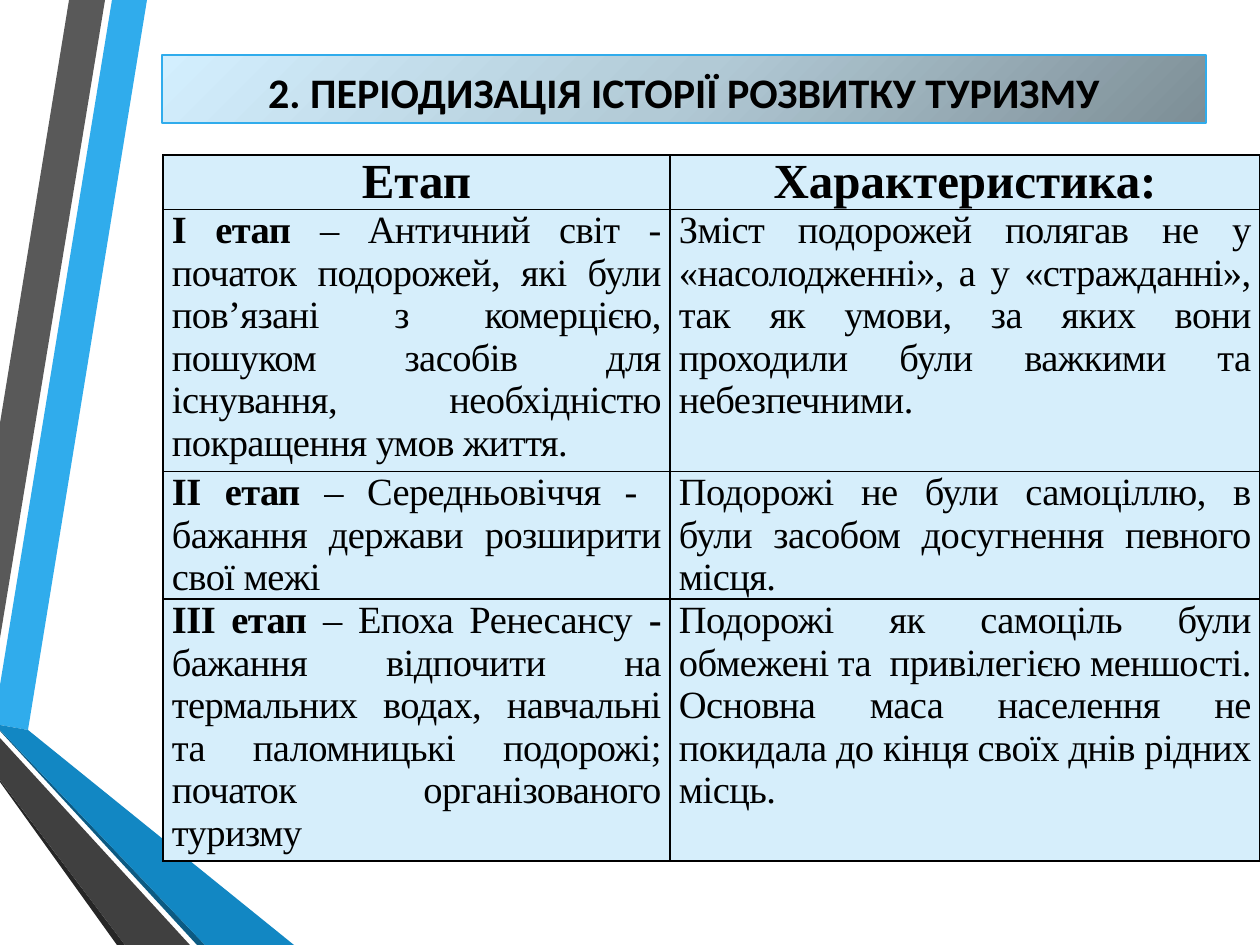
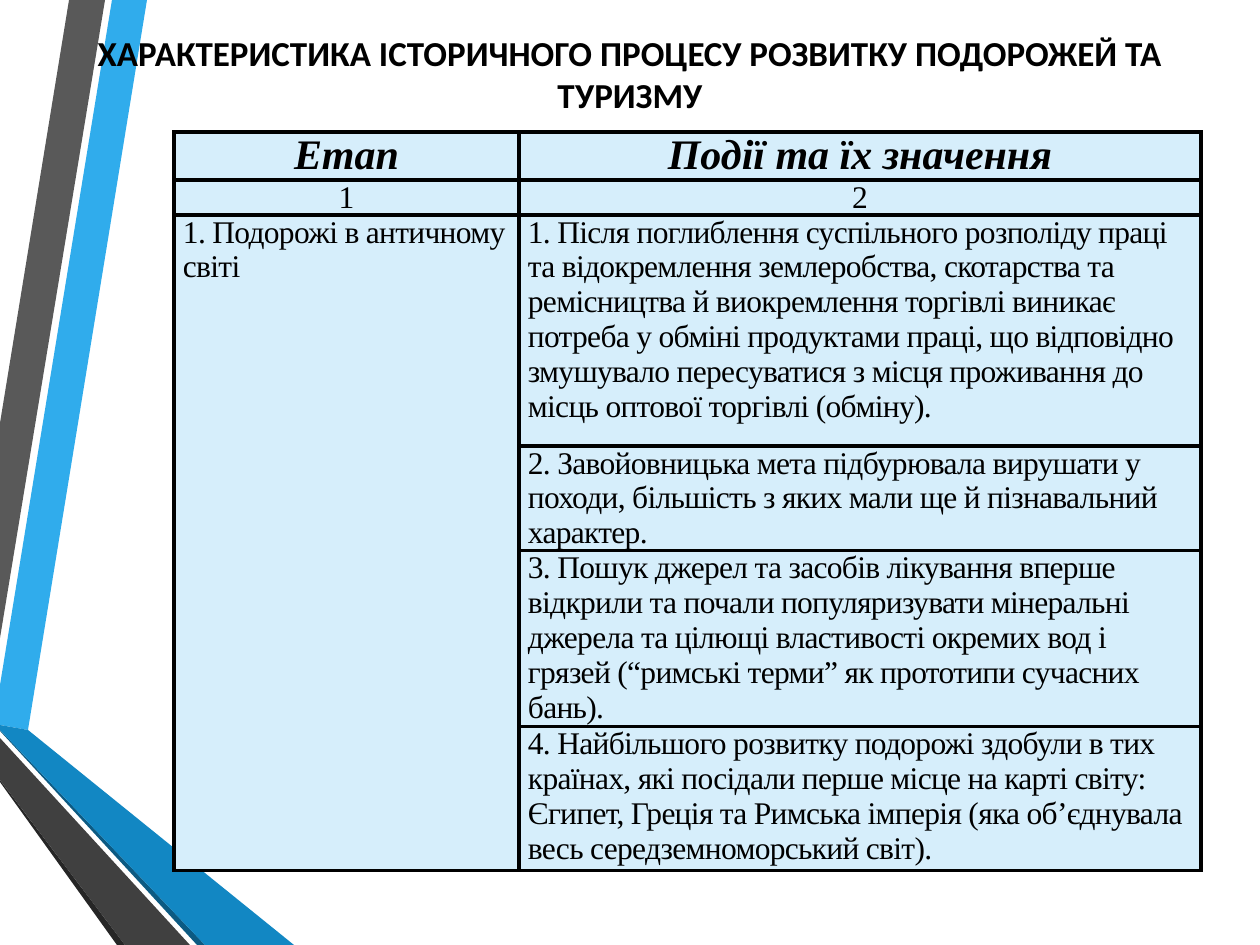
"""Two slides on the stages of the history of travel and tourism."""
from lxml import etree
from pptx import Presentation
from pptx import util as u
from pptx.dml import color
from pptx.enum import text
from pptx.oxml import ns

WIDTH, HEIGHT = 1260, 945
EMU_PER_PX = 914400 / 126
COLORS = {
    "sky": "30ACEC", "gray": "595959", "black": "000000", "ink": "262626",
    "navy": "0C5A82", "blue": "1287C3", "dark": "404040", "cell": "D6EEFB",
    "steel": "7D8E96", "mist": "B2CAD6", "ice": "D3EFFE",
}
BANDS = [
    ("sky", [(0, 685), (0, 725), (28, 730), (147, 0), (112, 0)]),
    ("gray", [(105, 0), (69, 0), (0, 423), (0, 638)]),
    ("ink", [(0, 780), (0, 782), (117, 945), (125, 945)]),
    ("navy", [(0, 730), (0, 731), (197, 945), (205, 945)]),
    ("blue", [(0, 730), (205, 945), (294, 945), (28, 730), (0, 725)]),
    ("dark", [(0, 780), (125, 945), (190, 945), (0, 738)]),
]
TITLE_GRADIENT = [(0, "steel"), (50, "mist"), (100, "ice")]
CENTER, JUSTIFY, LEFT = (text.PP_ALIGN.CENTER, text.PP_ALIGN.JUSTIFY,
                         text.PP_ALIGN.LEFT)
SERIF = "Times New Roman"

STAGES = [
    ["Етап", "Характеристика:"],
    [["І етап ", "– Античний світ - початок подорожей, які були пов’язані з "
      "комерцією, пошуком засобів для існування, необхідністю покращення "
      "умов життя."],
     "Зміст подорожей полягав не у «насолодженні», а у «стражданні», так як "
     "умови, за яких вони проходили були важкими та небезпечними."],
    [["ІІ етап ", "– Середньовіччя -  бажання держави розширити свої межі"],
     "Подорожі не були самоціллю, в були засобом досугнення певного місця."],
    [["ІІІ етап ", "– Епоха Ренесансу", " - ", "бажання відпочити на "
      "термальних водах, навчальні та паломницькі подорожі; початок "
      "організованого туризму"],
     "Подорожі як самоціль були обмежені та  привілегією меншості. Основна "
     "маса населення не покидала до кінця своїх днів рідних місць."],
]
EVENTS = [
    ["Етап", "Події та їх значення"],
    ["1", "2"],
    ["1. Подорожі в античному світі",
     "1. Після поглиблення суспільного розполіду праці та відокремлення "
     "землеробства, скотарства та ремісництва й виокремлення торгівлі "
     "виникає потреба у обміні продуктами праці, що відповідно змушувало "
     "пересуватися з місця проживання до місць оптової торгівлі (обміну)."],
    ["", "2. Завойовницька мета підбурювала вирушати у походи, більшість з "
     "яких мали ще й пізнавальний характер."],
    ["", "3. Пошук джерел та засобів лікування вперше відкрили та почали "
     "популяризувати мінеральні джерела та цілющі властивості окремих вод і "
     "грязей (“римські терми” як прототипи сучасних бань)."],
    ["", "4. Найбільшого розвитку подорожі здобули в тих країнах, які "
     "посідали перше місце на карті світу: Єгипет, Греція та Римська імперія "
     "(яка об’єднувала весь середземноморський світ)."],
]


def px(n):
    """Turn px into EMU."""
    return u.Emu(round(n * EMU_PER_PX))


def rgb(name):
    """Look up a named colour."""
    return color.RGBColor.from_string(COLORS[name])


def add_run(p, words, spacing=0, **fmt):
    """Add a black run with font settings and letter spacing in points."""
    r = p.add_run()
    r.text = words
    for key, value in fmt.items():
        setattr(r.font, key, value)
    r.font.color.rgb = rgb("black")
    if spacing:
        r.font._element.set("spc", str(round(spacing * 100)))


def add_bands(s, layout):
    """Draw the ribbon bands and move them to the back of the layout."""
    for i, (fill, points) in enumerate(BANDS):
        builder = s.shapes.build_freeform(*points[0], scale=EMU_PER_PX)
        builder.add_line_segments(points[1:], close=True)
        sp = builder.convert_to_shape()
        sp.shadow.inherit = False
        sp.fill.solid()
        sp.fill.fore_color.rgb = rgb(fill)
        sp.line.fill.background()
        layout.shapes.element.insert(2 + i, sp.element)


def set_title(s, words, box, size, top, bottom):
    """Place and format the title placeholder."""
    sp = s.shapes.title
    sp.left, sp.top, sp.width, sp.height = map(px, box)
    tf = sp.text_frame
    settings = {"word_wrap": True, "auto_size": text.MSO_AUTO_SIZE.NONE,
                "vertical_anchor": text.MSO_ANCHOR.MIDDLE,
                "margin_top": px(top), "margin_bottom": px(bottom)}
    for key, value in settings.items():
        setattr(tf, key, value)
    p = tf.paragraphs[0]
    p.alignment = CENTER
    add_run(p, words, name="Calibri", size=u.Pt(size), bold=True)
    return sp


def shade_title(sp):
    """Give the title a gradient from its lower right corner and a thin line."""
    sp.fill.gradient()
    grad = sp.element.spPr.find(ns.qn("a:gradFill"))
    for child in list(grad):
        grad.remove(child)
    stops = etree.SubElement(grad, ns.qn("a:gsLst"))
    for pos, name in TITLE_GRADIENT:
        stop = etree.SubElement(stops, ns.qn("a:gs"), pos=str(pos * 1000))
        etree.SubElement(stop, ns.qn("a:srgbClr"), val=COLORS[name])
    path = etree.SubElement(grad, ns.qn("a:path"), {"path": "circle"})
    etree.SubElement(path, ns.qn("a:fillToRect"), l="100000", t="100000")
    sp.line.color.rgb = rgb("sky")
    sp.line.width = u.Pt(0.75)


def format_cell(cell, border):
    """Set the borders, fill and margins of a cell."""
    tc_pr = cell._tc.get_or_add_tcPr()
    for side in "LRTB":
        ln = etree.SubElement(tc_pr, ns.qn("a:ln" + side),
                              w=str(u.Pt(border)))
        fill = etree.SubElement(ln, ns.qn("a:solidFill"))
        etree.SubElement(fill, ns.qn("a:srgbClr"), val=COLORS["black"])
    cell.fill.solid()
    cell.fill.fore_color.rgb = rgb("cell")
    margins = {"left": 9, "right": 9, "top": 0, "bottom": 0}
    for side, width in margins.items():
        setattr(cell, "margin_" + side, px(width))


def write_cell(cell, content, align, fmt):
    """Write plain text, or a list of runs that alternate bold and regular."""
    p = cell.text_frame.paragraphs[0]
    p.alignment = align
    if isinstance(content, str):
        add_run(p, content, **fmt)
        return
    for i, words in enumerate(content):
        add_run(p, words, **{**fmt, "bold": i % 2 == 0})


def add_grid(s, rows, at, widths, heights, border, styles):
    """Add a table; styles holds alignment and font, the last one repeating."""
    frame = s.shapes.add_table(len(rows), len(widths), *map(px, at),
                               px(sum(widths)), px(sum(heights)))
    table = frame.table
    for col, width in zip(table.columns, widths):
        col.width = px(width)
    for i, (contents, height) in enumerate(zip(rows, heights)):
        table.rows[i].height = px(height)
        align, fmt = styles[min(i, len(styles) - 1)]
        for j, content in enumerate(contents):
            format_cell(table.cell(i, j), border)
            if content:
                write_cell(table.cell(i, j), content, align, fmt)
    return table


def font(size, **more):
    """Describe a serif font for table text."""
    return {"name": SERIF, "size": u.Pt(size), "bold": False, **more}


def main():
    """Build both slides and save them."""
    prs = Presentation()
    prs.slide_width, prs.slide_height = px(WIDTH), px(HEIGHT)
    layout = prs.slide_layouts[5]

    s = prs.slides.add_slide(layout)
    add_bands(s, layout)
    sp = set_title(s, "2. ПЕРІОДИЗАЦІЯ ІСТОРІЇ РОЗВИТКУ ТУРИЗМУ",
                   (162, 55, 1044, 68), 24, 12, 6)
    shade_title(sp)
    add_grid(s, STAGES, (163, 155), (507, 590), (54, 262, 128, 262), 1,
             [(CENTER, font(28, bold=True)),
              (JUSTIFY, font(22, spacing=-0.3))])

    s = prs.slides.add_slide(layout)
    set_title(s, "ХАРАКТЕРИСТИКА ІСТОРИЧНОГО ПРОЦЕСУ РОЗВИТКУ ПОДОРОЖЕЙ ТА "
              "ТУРИЗМУ", (63, 38, 1134, 109), 20, 0, 38)
    body = font(18, spacing=-0.4)
    table = add_grid(s, EVENTS, (174, 132), (345, 682),
                     (48, 35, 231, 104, 176, 144), 2.25,
                     [(CENTER, font(24, bold=True, italic=True)),
                      (CENTER, body), (LEFT, body)])
    table.cell(2, 0).merge(table.cell(5, 0))

    prs.save("out.pptx")


if __name__ == "__main__":
    main()
